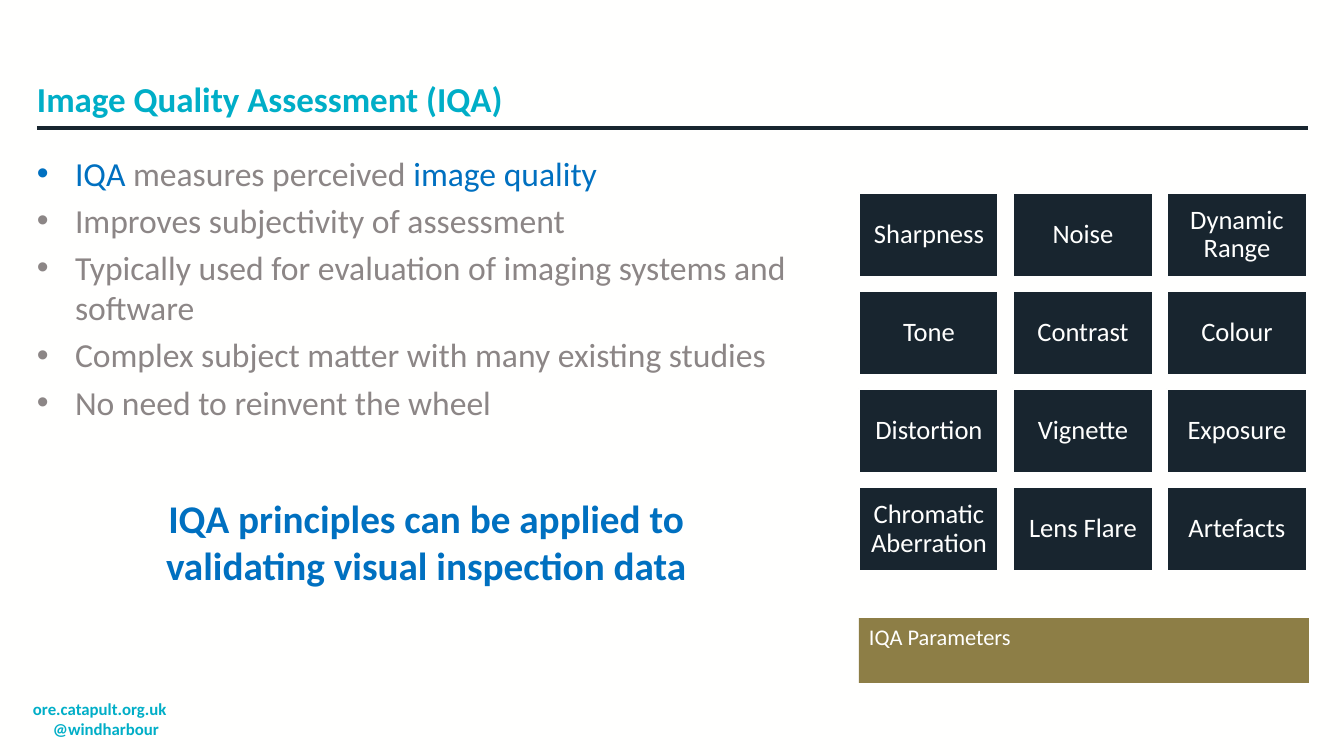
from lxml.etree import SubElement
from pptx import Presentation
from pptx.dml.color import RGBColor
from pptx.enum.shapes import MSO_CONNECTOR, MSO_SHAPE
from pptx.enum.text import MSO_ANCHOR, MSO_AUTO_SIZE, PP_ALIGN
from pptx.oxml.ns import qn
from pptx.util import Emu, Pt

EMU_PER_PX = 914400 / 100.8
FONT = "Calibri"
WHITE, NAVY, TEAL = "FFFFFE", "18252F", "00AEC7"
BLUE, GREY, GOLD = "0070C0", "8C8686", "8D7E46"

BULLETS = [
    [("IQA", BLUE), (" measures perceived ", GREY), ("image quality", BLUE)],
    [("Improves subjectivity of assessment", GREY)],
    [("Typically used for evaluation of imaging systems and software", GREY)],
    [("Complex subject matter with many existing studies", GREY)],
    [("No need to reinvent the wheel", GREY)],
]
PARAMETERS = [
    ["Sharpness", "Noise", "Dynamic Range"],
    ["Tone", "Contrast", "Colour"],
    ["Distortion", "Vignette", "Exposure"],
    ["Chromatic Aberration", "Lens Flare", "Artefacts"],
]


def px(length):
    return Emu(round(length * EMU_PER_PX))


def rgb(value):
    return RGBColor.from_string(value)


def place(shape, left, top, width, height):
    shape.left, shape.top = px(left), px(top)
    shape.width, shape.height = px(width), px(height)


def set_frame(shape, insets=(10, 5, 10, 5), anchor=MSO_ANCHOR.TOP):
    frame = shape.text_frame
    frame.word_wrap = True
    frame.auto_size = MSO_AUTO_SIZE.NONE
    frame.vertical_anchor = anchor
    frame.margin_left, frame.margin_top, frame.margin_right, frame.margin_bottom = map(px, insets)
    return frame


def set_indent(paragraph, left, hanging=0, bullet=None):
    properties = paragraph._p.get_or_add_pPr()
    properties.set("marL", str(px(left)))
    properties.set("indent", str(-px(hanging)))
    if bullet:
        SubElement(properties, qn("a:buChar"), char=bullet)
    else:
        SubElement(properties, qn("a:buNone"))


def style(paragraph, size, color=None, bold=False, align=PP_ALIGN.LEFT):
    paragraph.alignment = align
    font = paragraph.font
    font.name, font.size, font.bold = FONT, Pt(size), bold
    if color:
        font.color.rgb = rgb(color)


def add_rule(slide, left, right, y):
    rule = slide.shapes.add_connector(MSO_CONNECTOR.STRAIGHT, px(left), px(y), px(right), px(y))
    rule.line.color.rgb = rgb(NAVY)
    rule.line.width = Pt(3)
    SubElement(rule._element.spPr, qn("a:effectLst"))


def add_text(slide, lines, box, size, color, align=PP_ALIGN.LEFT, indents=None):
    shape = slide.shapes.add_textbox(0, 0, 0, 0)
    place(shape, *box)
    frame = set_frame(shape)
    frame.text = "\n".join(lines)
    for paragraph, indent in zip(frame.paragraphs, indents or [0] * len(lines)):
        set_indent(paragraph, indent)
        style(paragraph, size, color, True, align)


def add_tile(slide, label, left, top):
    tile = slide.shapes.add_shape(MSO_SHAPE.RECTANGLE, px(left), px(top), px(140), px(84))
    tile.shadow.inherit = False
    tile.fill.solid()
    tile.fill.fore_color.rgb = rgb(NAVY)
    tile.line.color.rgb = rgb(WHITE)
    tile.line.width = Pt(2)
    frame = set_frame(tile, (8, 8, 8, 8), MSO_ANCHOR.MIDDLE)
    frame.text = label
    paragraph = frame.paragraphs[0]
    paragraph.line_spacing = 0.9
    style(paragraph, 19, WHITE, align=PP_ALIGN.CENTER)


def fill_title(title):
    place(title, 37, 30, 1270, 98)
    frame = set_frame(title, (0, 4, 20, 8), MSO_ANCHOR.BOTTOM)
    frame.text = "Image Quality Assessment (IQA)"
    style(frame.paragraphs[0], 25, TEAL, True)


def fill_bullets(body):
    place(body, 37, 148, 778, 535)
    frame = set_frame(body, (0, 5, 10, 5))
    for number, parts in enumerate(BULLETS):
        paragraph = frame.add_paragraph() if number else frame.paragraphs[0]
        paragraph.space_before = Pt(4.8 if number else 0)
        set_indent(paragraph, 38, 38, "•")
        style(paragraph, 24)
        for text, color in parts:
            run = paragraph.add_run()
            run.text = text
            run.font.color.rgb = rgb(color)


def fill_caption(caption):
    place(caption, 859, 618, 450, 65)
    caption.fill.solid()
    caption.fill.fore_color.rgb = rgb(GOLD)
    frame = set_frame(caption)
    frame.text = "IQA Parameters"
    paragraph = frame.paragraphs[0]
    paragraph.space_before = Pt(0)
    set_indent(paragraph, 0)
    style(paragraph, 16, WHITE)


def main():
    presentation = Presentation()
    presentation.slide_width, presentation.slide_height = px(1344), px(756)
    slide = presentation.slides.add_slide(presentation.slide_layouts[3])
    slide.background.fill.solid()
    slide.background.fill.fore_color.rgb = rgb(WHITE)

    # Title, list and caption placeholders
    title, body, caption = slide.placeholders
    fill_title(title)
    fill_bullets(body)
    fill_caption(caption)
    add_rule(slide, 37, 1308, 128)

    # Grid of quality parameters
    for row, labels in enumerate(PARAMETERS):
        for column, label in enumerate(labels):
            add_tile(slide, label, 859 + 154 * column, 193 + 98 * row)

    # Key message and footer
    add_text(slide, ["IQA principles can be applied to validating visual inspection data"],
             (132, 489, 588, 105), 28, BLUE, PP_ALIGN.CENTER)
    add_text(slide, ["ore.catapult.org.uk", "@windharbour"],
             (23, 694, 215, 50), 12, TEAL, indents=[0, 20])

    presentation.save("out.pptx")


if __name__ == "__main__":
    main()
